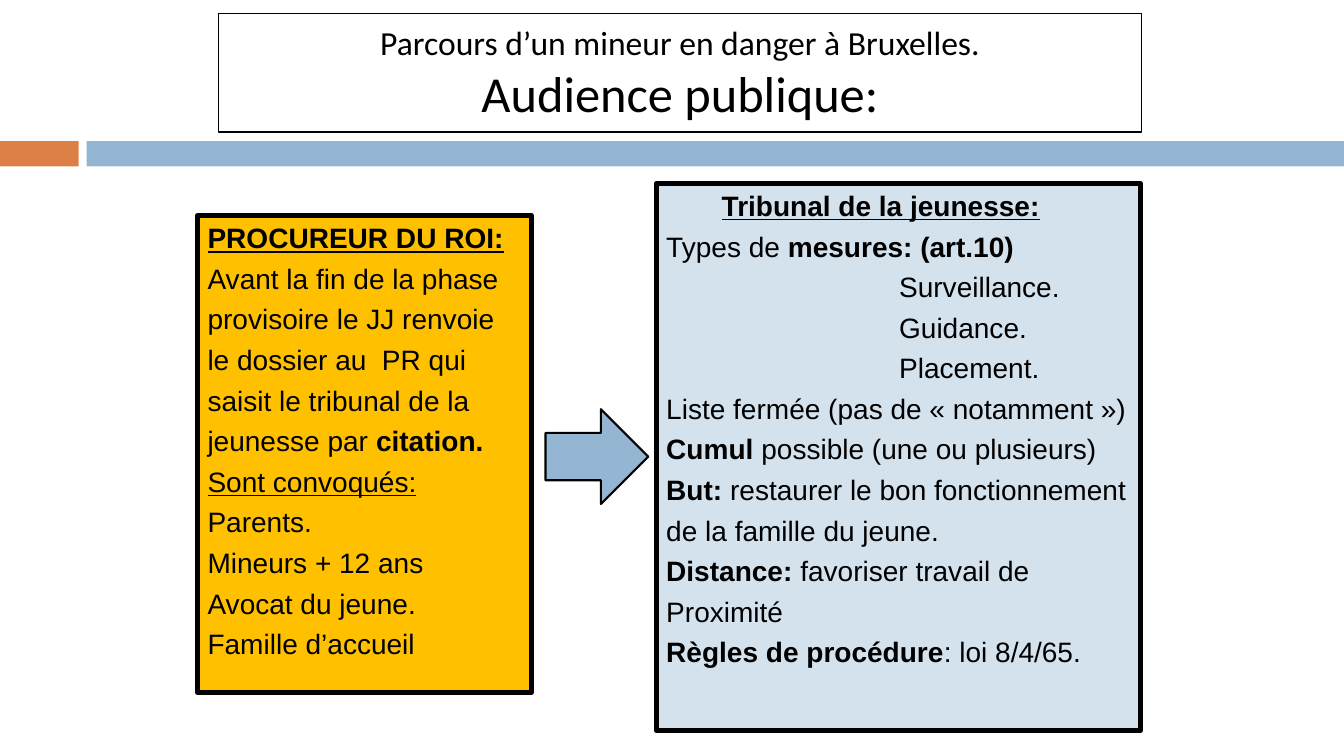
from pptx import Presentation
from pptx.dml.color import RGBColor
from pptx.enum.shapes import MSO_SHAPE
from pptx.enum.text import MSO_ANCHOR, PP_ALIGN
from pptx.util import Inches, Pt

RECTANGLE, RIGHT_ARROW = MSO_SHAPE.RECTANGLE, MSO_SHAPE.RIGHT_ARROW
TOP, MIDDLE = MSO_ANCHOR.TOP, MSO_ANCHOR.MIDDLE
LEFT, CENTER = PP_ALIGN.LEFT, PP_ALIGN.CENTER

THEME = {
    "orange": "DD8047",
    "blue": "94B6D2",
    "pale_blue": "D4E2ED",
    "amber": "FFC000",
    "white": "FFFFFF",
    "black": "000000",
    "title_font": "Calibri",
    "body_font": "Arial",
    "body_size": 20,
    "space_before": 5,
}

PLAIN = {"bold": False, "underline": False}
BOLD = {"bold": True, "underline": False}
UNDERLINED = {"bold": False, "underline": True}
HEADING = {"bold": True, "underline": True}

TITLE = [("Parcours d’un mineur en danger à Bruxelles.", 24), ("Audience publique:", 36)]

COURT_LINES = [
    (0.55, [("Tribunal de la jeunesse:", HEADING)]),
    (0, [("Types de ", PLAIN), ("mesures: (art.10)", BOLD)]),
    (2.31, [("Surveillance.", PLAIN)]),
    (2.31, [("Guidance.", PLAIN)]),
    (2.31, [("Placement.", PLAIN)]),
    (0, [("Liste fermée (pas de « notamment »)", PLAIN)]),
    (0, [("Cumul ", BOLD), ("possible (une ou plusieurs)", PLAIN)]),
    (0, [("But:", BOLD), (" restaurer le bon fonctionnement", PLAIN)]),
    (0, [("de la famille du jeune.", PLAIN)]),
    (0, [("Distance:", BOLD), (" favoriser travail de", PLAIN)]),
    (0, [("Proximité", PLAIN)]),
    (0, [("Règles de procédure", BOLD), (": loi 8/4/65.", PLAIN)]),
]

PROSECUTOR_LINES = [
    (0, [("PROCUREUR DU ROI:", HEADING)]),
    (0, [("Avant la fin de la phase", PLAIN)]),
    (0, [("provisoire le JJ renvoie", PLAIN)]),
    (0, [("le dossier au  PR qui", PLAIN)]),
    (0, [("saisit le tribunal de la", PLAIN)]),
    (0, [("jeunesse par ", PLAIN), ("citation.", BOLD)]),
    (0, [("Sont convoqués:", UNDERLINED)]),
    (0, [("Parents.", PLAIN)]),
    (0, [("Mineurs + 12 ans", PLAIN)]),
    (0, [("Avocat du jeune.", PLAIN)]),
    (0, [("Famille d’accueil", PLAIN)]),
]

TITLE_PLACE = (2.17, 0.13, 9.15, 1.18)
SHAPES = [
    (RECTANGLE, (0, 1.4, 0.78, 0.25), "orange", 0, []),
    (RECTANGLE, (0.86, 1.4, 12.47, 0.25), "blue", 0, []),
    (RECTANGLE, (6.51, 1.82, 4.8, 5.43), "pale_blue", 3.5, COURT_LINES),
    (RECTANGLE, (1.96, 2.14, 3.31, 4.73), "amber", 3.5, PROSECUTOR_LINES),
    (RIGHT_ARROW, (5.41, 4.06, 1.02, 0.94), "blue", 1.5, []),
]


def color(name):
    return RGBColor.from_string(THEME[name])


def paint(shape, fill, line_width):
    shape.fill.solid()
    shape.fill.fore_color.rgb = color(fill)
    if line_width:
        shape.line.color.rgb = color("black")
        shape.line.width = Pt(line_width)
    else:
        shape.line.fill.background()


def add_span(para, text, formats):
    span = para.add_run()
    span.text = text
    for name, value in formats.items():
        setattr(span.font, name, value)
    span.font.color.rgb = color("black")


def write_title(title):
    for name, value in zip(("left", "top", "width", "height"), TITLE_PLACE):
        setattr(title, name, Inches(value))
    paint(title, "white", 0.75)
    title.text_frame.vertical_anchor = MIDDLE
    para = title.text_frame.paragraphs[0]
    para.alignment = CENTER
    for index, (text, size) in enumerate(TITLE):
        if index:
            para.add_line_break()
        add_span(para, text, {"name": THEME["title_font"], "size": Pt(size)})


def write_lines(box, lines):
    frame = box.text_frame
    frame.word_wrap = True
    frame.vertical_anchor = TOP
    base = {"name": THEME["body_font"], "size": Pt(THEME["body_size"])}
    for index, (indent, spans) in enumerate(lines):
        para = frame.add_paragraph() if index else frame.paragraphs[0]
        para.alignment = LEFT
        para.space_before = Pt(THEME["space_before"])
        para._p.get_or_add_pPr().set("marL", str(Inches(indent)))
        for text, formats in spans:
            add_span(para, text, base | formats)


def main():
    deck = Presentation()
    deck.slide_width, deck.slide_height = Inches(13.33), Inches(7.5)
    page = deck.slides.add_slide(deck.slide_layouts[5])
    write_title(page.shapes.title)
    for kind, place, fill, line_width, lines in SHAPES:
        shape = page.shapes.add_shape(kind, *map(Inches, place))
        shape.shadow.inherit = False
        paint(shape, fill, line_width)
        if lines:
            write_lines(shape, lines)
    deck.save("out.pptx")


if __name__ == "__main__":
    main()
